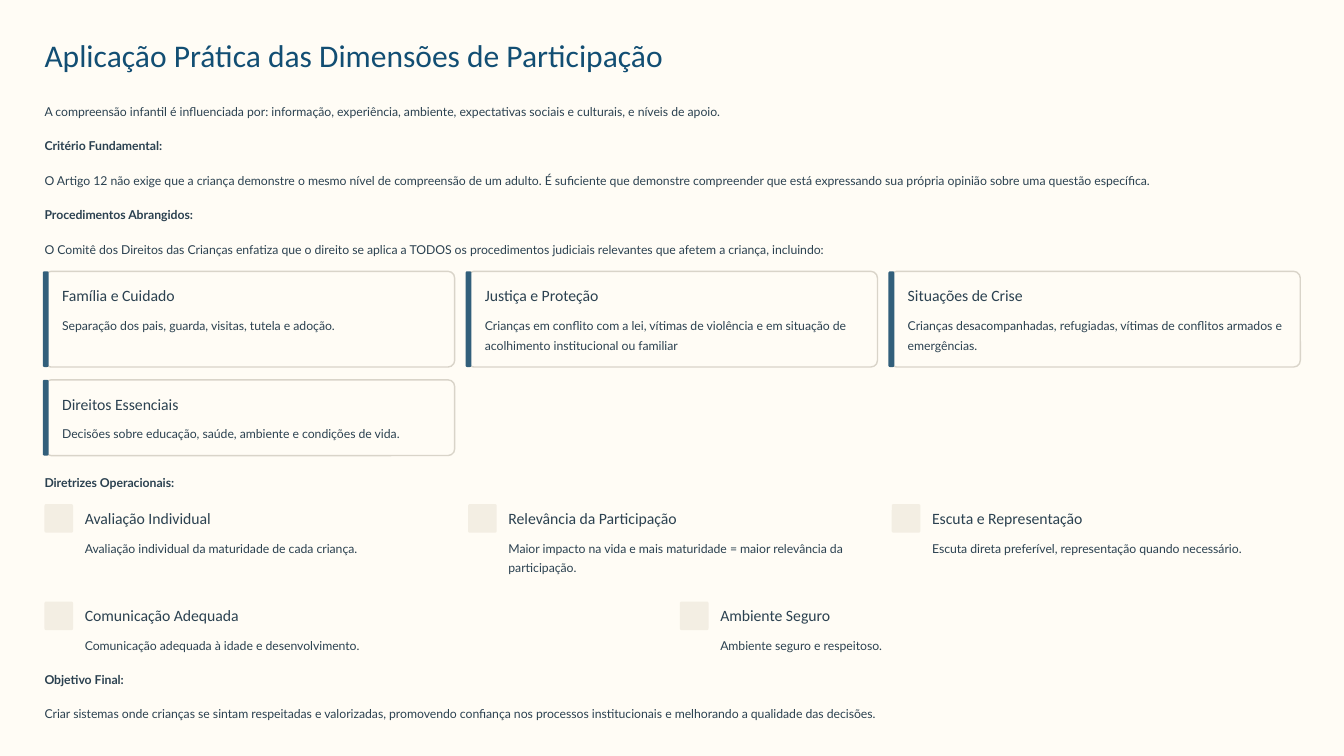
from pptx import Presentation
from pptx.dml.color import RGBColor
from pptx.enum.shapes import MSO_SHAPE as Shape
from pptx.util import Inches, Pt

CREAM = RGBColor(0xFF, 0xFC, 0xF5)
NAVY = RGBColor(0x12, 0x4E, 0x73)
SLATE = RGBColor(0x2B, 0x41, 0x50)
STEEL = RGBColor(0x32, 0x5F, 0x7B)
STONE = RGBColor(0xD9, 0xD4, 0xC9)
SAND = RGBColor(0xF3, 0xEE, 0xE3)

MARGIN, CONTENT = 0.53, 14.95
TITLE_TOP, BODY_TOP, ROW = 0.41, 1.18, 0.41
CARD_GAP, MARKER_GAP = 0.15, 0.18

INTRO = [
    ("A compreensão infantil é influenciada por: informação, experiência, ambiente, "
     "expectativas sociais e culturais, e níveis de apoio.", False),
    ("Critério Fundamental:", True),
    ("O Artigo 12 não exige que a criança demonstre o mesmo nível de compreensão de um adulto. "
     "É suficiente que demonstre compreender que está expressando sua própria opinião "
     "sobre uma questão específica.", False),
    ("Procedimentos Abrangidos:", True),
    ("O Comitê dos Direitos das Crianças enfatiza que o direito se aplica a TODOS os "
     "procedimentos judiciais relevantes que afetem a criança, incluindo:", False),
]
GUIDELINES = [("Diretrizes Operacionais:", True)]
CLOSING = [
    ("Objetivo Final:", True),
    ("Criar sistemas onde crianças se sintam respeitadas e valorizadas, promovendo confiança "
     "nos processos institucionais e melhorando a qualidade das decisões.", False),
]
# Each group: first grid row, height in rows, cards
CARD_ROWS = [
    (5, 2.78, [
        ("Família e Cuidado", "Separação dos pais, guarda, visitas, tutela e adoção."),
        ("Justiça e Proteção", "Crianças em conflito com a lei, vítimas de violência e em "
                               "situação de acolhimento institucional ou familiar"),
        ("Situações de Crise", "Crianças desacompanhadas, refugiadas, vítimas de conflitos "
                               "armados e emergências."),
    ]),
    (8.15, 2.2, [
        ("Direitos Essenciais", "Decisões sobre educação, saúde, ambiente e condições de vida."),
    ]),
]
# Each group: first grid row, guidelines sharing the full width
MARKER_ROWS = [
    (11.76, [
        ("Avaliação Individual", "Avaliação individual da maturidade de cada criança."),
        ("Relevância da Participação", "Maior impacto na vida e mais maturidade = maior "
                                       "relevância da participação."),
        ("Escuta e Representação", "Escuta direta preferível, representação quando necessário."),
    ]),
    (14.59, [
        ("Comunicação Adequada", "Comunicação adequada à idade e desenvolvimento."),
        ("Ambiente Seguro", "Ambiente seguro e respeitoso."),
    ]),
]


def row_top(row):
    return BODY_TOP + row * ROW


def column(index, count, gap):
    """Return the left edge and width of one of count equal columns."""
    width = (CONTENT - gap * (count - 1)) / count
    return MARGIN + index * (width + gap), width


class Board:
    def __init__(self, page):
        self.page = page
        page.background.fill.solid()
        page.background.fill.fore_color.rgb = CREAM

    def text(self, left, top, width, height, words, font="Lato", size=10.5,
             leading=17, color=SLATE, bold=False):
        box = self.page.shapes.add_textbox(*map(Inches, (left, top, width, height)))
        frame = box.text_frame
        frame.margin_left = frame.margin_right = frame.margin_top = frame.margin_bottom = 0
        frame.word_wrap = True
        frame.text = words
        para = frame.paragraphs[0]
        para.line_spacing = Pt(leading)
        span = para.runs[0].font
        span.name, span.size, span.bold = font, Pt(size), bold
        span.color.rgb = color

    def title(self, words):
        self.text(MARGIN, TITLE_TOP, CONTENT, 0.47, words, "Calibri", 27, 33.5, NAVY)

    def lines(self, row, entries):
        for step, (words, bold) in enumerate(entries):
            self.text(MARGIN, row_top(row + step), CONTENT, 0.24, words, bold=bold)

    def rounded(self, left, top, width, height, radius, fill, line=None):
        shape = self.page.shapes.add_shape(
            Shape.ROUNDED_RECTANGLE, *map(Inches, (left, top, width, height)))
        shape.shadow.inherit = False
        shape.adjustments[0] = radius / min(width, height)
        shape.fill.solid()
        shape.fill.fore_color.rgb = fill
        if line:
            shape.line.color.rgb = line
            shape.line.width = Pt(1.2)
        else:
            shape.line.fill.background()

    def entry(self, left, top, width, heading, detail):
        """Write a heading with its detail below."""
        self.text(left, top, width, 0.23, heading, "Calibri", 13.5, 16.5)
        self.text(left, top + 0.325, width, 0.48, detail)

    def card(self, index, row, rows, heading, detail):
        left, width = column(index, 3, CARD_GAP)
        top, height = row_top(row), rows * ROW
        self.rounded(left, top, width, height, 0.08, CREAM, STONE)
        self.rounded(left - 0.02, top, 0.07, height, 0.02, STEEL)
        self.entry(left + 0.21, top + 0.17, width - 0.38, heading, detail)

    def marker(self, index, count, row, heading, detail):
        left, width = column(index, count, MARKER_GAP)
        top = row_top(row)
        self.rounded(left, top, 0.34, 0.34, 0.02, SAND)
        self.entry(left + 0.48, top + 0.05, width - 0.48, heading, detail)


def main():
    deck = Presentation()
    deck.slide_width, deck.slide_height = Inches(16), Inches(9)
    board = Board(deck.slides.add_slide(deck.slide_layouts[6]))
    board.title("Aplicação Prática das Dimensões de Participação")
    board.lines(0, INTRO)
    for row, rows, cards in CARD_ROWS:
        for index, (heading, detail) in enumerate(cards):
            board.card(index, row, rows, heading, detail)
    board.lines(10.76, GUIDELINES)
    for row, markers in MARKER_ROWS:
        for index, (heading, detail) in enumerate(markers):
            board.marker(index, len(markers), row, heading, detail)
    board.lines(16.49, CLOSING)
    deck.save("out.pptx")


if __name__ == "__main__":
    main()
